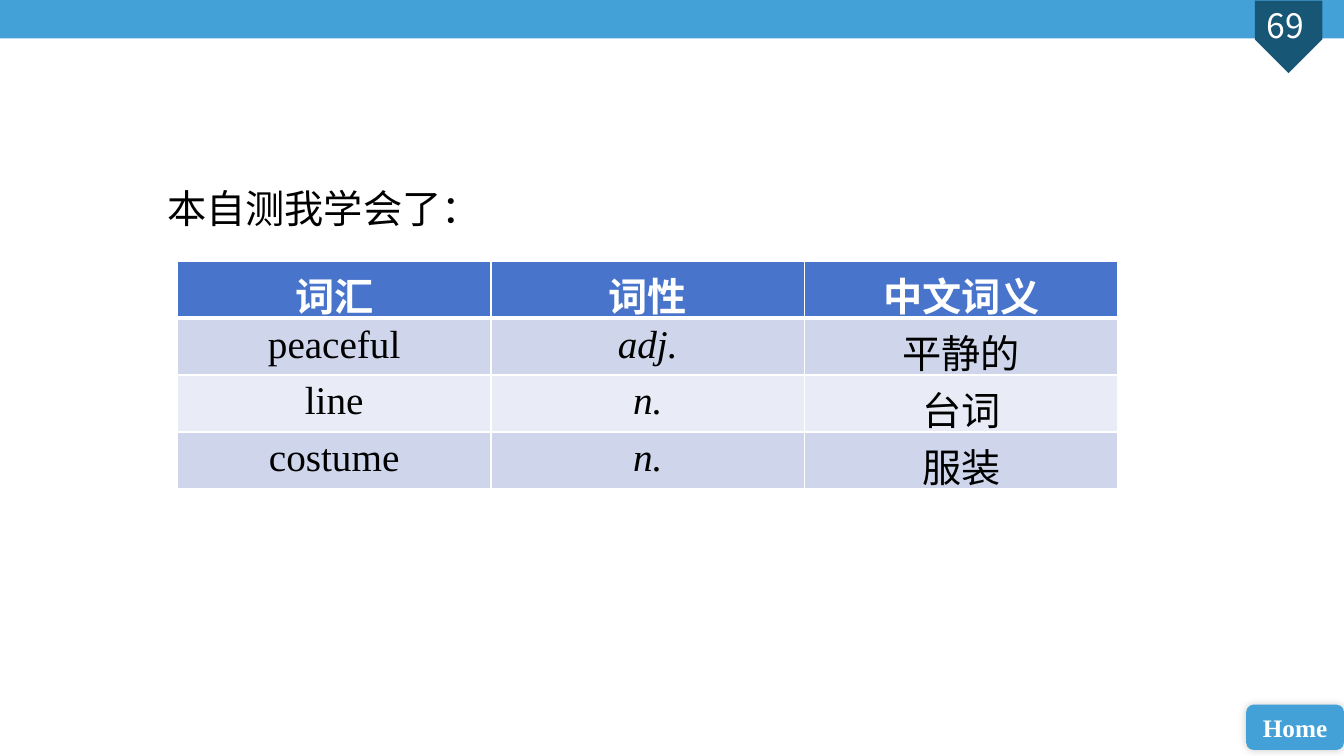
import pptx
import pptx.dml.color
import pptx.enum.shapes
import pptx.enum.text
import pptx.oxml
import pptx.oxml.ns
import pptx.util
from pptx.util import Inches

SHAPE = pptx.enum.shapes.MSO_SHAPE
ALIGN = pptx.enum.text.PP_ALIGN
ANCHOR = pptx.enum.text.MSO_ANCHOR
NS = pptx.oxml.ns.nsdecls("a")
SERIF = "Times New Roman"
SANS = "Noto Sans CJK SC"
BLUE, NAVY, WHITE, BLACK = "43A1D8", "185675", "FFFFFF", "000000"
HEADER_FILL, BAND_FILLS = "4874CB", ("E9EBF6", "CFD6EC")
WORDS = [
    ("词汇", "词性", "中文词义"),
    ("peaceful", "adj.", "平静的"),
    ("line", "n.", "台词"),
    ("costume", "n.", "服装"),
]


def rgb(value):
    return pptx.dml.color.RGBColor.from_string(value)


def add_run(p, text, size, font, color, bold=False, italic=False):
    r = p.add_run()
    r.text = text
    f = r.font
    f.size, f.name, f.bold, f.italic = pptx.util.Pt(size), font, bold, italic
    f.color.rgb = rgb(color)


def add_block(s, kind, x, y, w, h, fill):
    sp = s.shapes.add_shape(kind, Inches(x), Inches(y), Inches(w), Inches(h))
    sp.shadow.inherit = False
    sp.fill.solid()
    sp.fill.fore_color.rgb = rgb(fill)
    sp.line.fill.background()
    return sp


def add_top_bar(s, x, y, w, h, number):
    """Band across the slide with a page marker near its right end."""
    add_block(s, SHAPE.RECTANGLE, x, y, w, h, BLUE)
    marker = add_block(s, SHAPE.PENTAGON, x + w - 0.91, y + 0.03, 0.72, 0.67, NAVY)
    marker.rotation = 90
    box = s.shapes.add_textbox(Inches(x + w - 1.07), Inches(y), Inches(0.98), Inches(0.5))
    box.text_frame.word_wrap = True
    p = box.text_frame.paragraphs[0]
    p.alignment = ALIGN.CENTER
    add_run(p, number, 24, SANS, WHITE)


def add_home_button(s, x, y, w, h):
    sp = add_block(s, SHAPE.ROUNDED_RECTANGLE, x, y, w, h, BLUE)
    effects = sp._element.spPr.find(pptx.oxml.ns.qn("a:effectLst"))
    effects.append(pptx.oxml.parse_xml(
        f'<a:outerShdw {NS} blurRad="{pptx.util.Pt(6)}" dist="0" dir="18900000">'
        f'<a:srgbClr val="{BLACK}"><a:alpha val="20000"/></a:srgbClr></a:outerShdw>'))
    tf = sp.text_frame
    tf.word_wrap = True
    tf.vertical_anchor = ANCHOR.MIDDLE
    p = tf.paragraphs[0]
    p.alignment = ALIGN.CENTER
    add_run(p, "Home", 18, SERIF, WHITE, bold=True)


def set_title(s, x, y, w, h, text):
    sp = s.shapes.title
    sp.left, sp.top, sp.width, sp.height = map(Inches, (x, y, w, h))
    tf = sp.text_frame
    tf.word_wrap = True
    tf.auto_size = pptx.enum.text.MSO_AUTO_SIZE.NONE
    tf.vertical_anchor = ANCHOR.TOP
    p = tf.paragraphs[0]
    p.alignment = ALIGN.LEFT
    add_run(p, text, 28, "Calibri", BLACK)


def set_borders(cell, top, bottom):
    """White borders, with the top and bottom widths in points."""
    tcPr = cell._tc.get_or_add_tcPr()
    for side, width in (("L", 1), ("R", 1), ("T", top), ("B", bottom)):
        tcPr.append(pptx.oxml.parse_xml(
            f'<a:ln{side} {NS} w="{pptx.util.Pt(width)}"><a:solidFill>'
            f'<a:srgbClr val="{WHITE}"/></a:solidFill></a:ln{side}>'))


def add_word_table(s, x, y, w, h, rows):
    table = s.shapes.add_table(
        len(rows), len(rows[0]), Inches(x), Inches(y), Inches(w), Inches(h)).table
    for i, words in enumerate(rows):
        header = i == 0
        for j, word in enumerate(words):
            cell = table.cell(i, j)
            set_borders(cell, 3 if i == 1 else 1, 3 if header else 1)
            cell.fill.solid()
            cell.fill.fore_color.rgb = rgb(HEADER_FILL if header else BAND_FILLS[i % 2])
            # The tall CJK line hangs slightly below its row
            cell.margin_top, cell.margin_bottom = Inches(0.05), Inches(-0.05)
            p = cell.text_frame.paragraphs[0]
            p.alignment = ALIGN.CENTER
            add_run(p, word, 28, SERIF, WHITE if header else BLACK,
                    bold=header, italic=not header and j == 1)


def main():
    prs = pptx.Presentation()
    prs.slide_width, prs.slide_height = Inches(13.33), Inches(7.5)
    s = prs.slides.add_slide(prs.slide_layouts.get_by_name("Title Only"))
    add_top_bar(s, 0, 0, 13.33, 0.38, "69")
    add_home_button(s, 12.36, 6.99, 0.97, 0.45)
    add_word_table(s, 1.76, 2.59, 9.33, 2.26, WORDS)
    set_title(s, 1.56, 1.78, 3.87, 0.57, "本自测我学会了：")
    prs.save("out.pptx")


if __name__ == "__main__":
    main()
